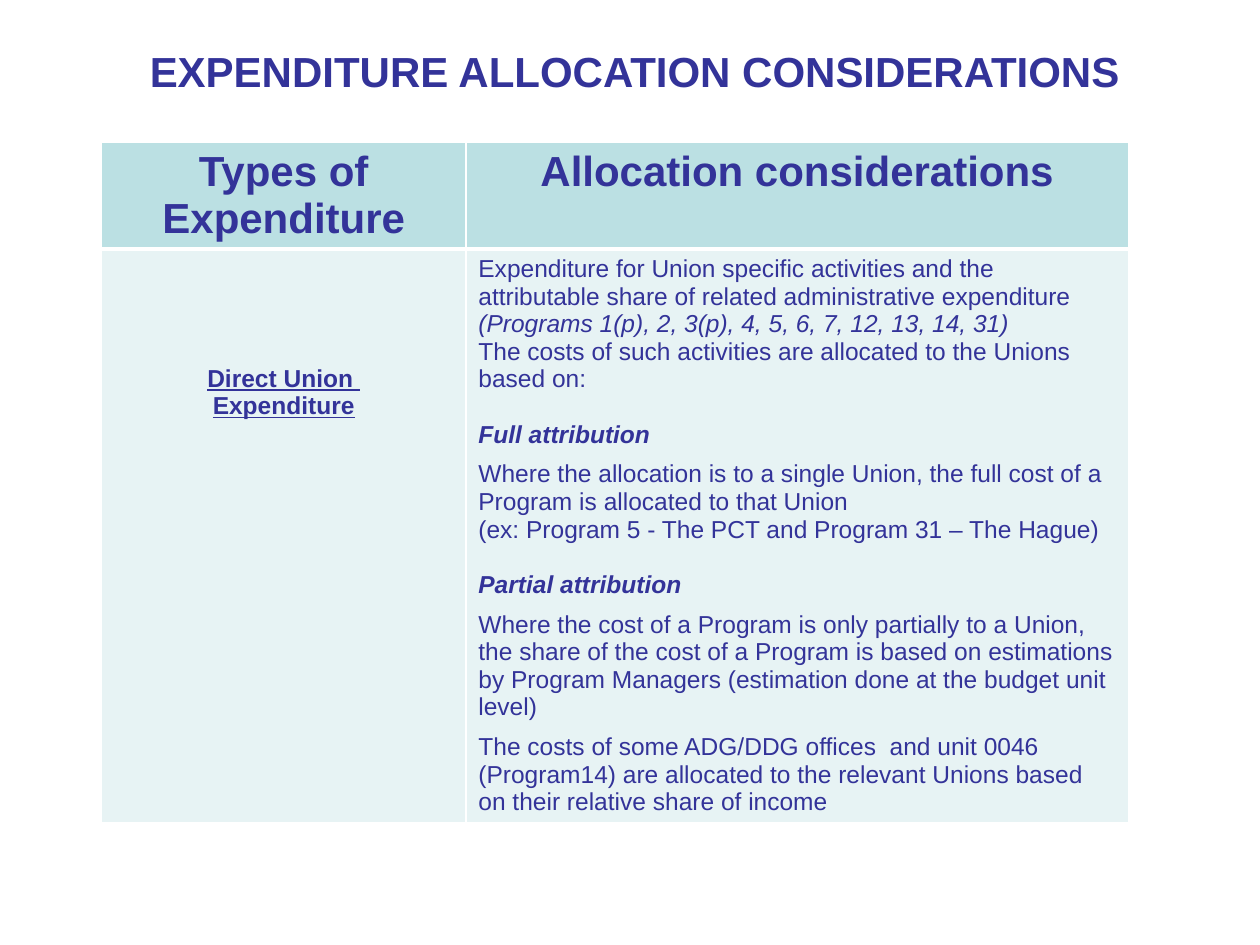
from dataclasses import dataclass

from lxml import etree
from pptx import Presentation
from pptx.dml.color import RGBColor
from pptx.enum import text
from pptx.oxml import ns
from pptx.util import Cm, Pt


@dataclass(frozen=True)
class Theme:
    font: str = "Arial"
    ink: str = "333399"
    header_fill: str = "BBE0E3"
    body_fill: str = "E7F3F4"
    rule: str = "FFFFFF"
    heading: int = 24
    body: int = 14
    wide_gap: int = 16
    small_gap: int = 7


@dataclass(frozen=True)
class Run:
    wording: str
    bold: bool = False
    italic: bool = False
    underline: bool = False


@dataclass(frozen=True)
class Para:
    runs: tuple[Run, ...]
    gap: int = 0


@dataclass(frozen=True)
class Entry:
    paras: tuple[Para, ...]
    fill: str
    size: int
    centred: bool = False
    top: float = 0.13
    bottom_rule: int = 1


THEME = Theme()


def plain(wording: str, gap: int = 0, **style: bool) -> Para:
    return Para((Run(wording, **style),), gap)


def write(frame, paras: tuple[Para, ...], *, size: int, centred: bool = False) -> None:
    frame.word_wrap = True
    for index, para in enumerate(paras):
        line = frame.paragraphs[0] if index == 0 else frame.add_paragraph()
        line.alignment = text.PP_ALIGN.CENTER if centred else text.PP_ALIGN.LEFT
        line.space_before = Pt(para.gap)
        for part in para.runs:
            run = line.add_run()
            run.text = part.wording
            run.font.name = THEME.font
            run.font.size = Pt(size)
            run.font.color.rgb = RGBColor.from_string(THEME.ink)
            run.font.bold = part.bold
            run.font.italic = part.italic
            run.font.underline = part.underline


def rule_cell(cell, bottom: int) -> None:
    properties = cell._tc.get_or_add_tcPr()
    widths = {"a:lnL": 1, "a:lnR": 1, "a:lnT": 1, "a:lnB": bottom}
    for position, (side, width) in enumerate(widths.items()):
        border = etree.Element(ns.qn(side), w=str(Pt(width)))
        fill = etree.SubElement(border, ns.qn("a:solidFill"))
        etree.SubElement(fill, ns.qn("a:srgbClr"), val=THEME.rule)
        properties.insert(position, border)


def fill_cell(cell, entry: Entry) -> None:
    cell.fill.solid()
    cell.fill.fore_color.rgb = RGBColor.from_string(entry.fill)
    cell.margin_top = Cm(entry.top)
    write(cell.text_frame, entry.paras, size=entry.size, centred=entry.centred)
    rule_cell(cell, entry.bottom_rule)


def header(wording: str) -> Entry:
    return Entry((plain(wording, bold=True),), THEME.header_fill, THEME.heading,
                 centred=True, bottom_rule=3)


EXPENDITURE_TYPE = (
    plain("Direct Union ", bold=True, underline=True),
    plain("Expenditure", bold=True, underline=True),
)

CONSIDERATIONS = (
    Para((
        Run("Expenditure for Union specific activities and the attributable share "
            "of related administrative expenditure "),
        Run("(Programs 1(p), 2, 3(p), 4, 5, 6, 7, 12, 13, 14, 31)", italic=True),
    )),
    plain("The costs of such activities are allocated to the Unions based on:"),
    plain("Full attribution", THEME.wide_gap, bold=True, italic=True),
    plain("Where the allocation is to a single Union, the full cost of a Program "
          "is allocated to that Union", THEME.small_gap),
    plain("(ex: Program 5 - The PCT and Program 31 – The Hague)"),
    plain("Partial attribution", THEME.wide_gap, bold=True, italic=True),
    plain("Where the cost of a Program is only partially to a Union, the share of "
          "the cost of a Program is based on estimations by Program Managers "
          "(estimation done at the budget unit level)", THEME.small_gap),
    plain("The costs of some ADG/DDG offices  and unit 0046 (Program14) are "
          "allocated to the relevant Unions based on their relative share of income",
          THEME.small_gap),
)

ROWS = (
    (header("Types of Expenditure"), header("Allocation considerations")),
    (Entry(EXPENDITURE_TYPE, THEME.body_fill, THEME.body, centred=True, top=2.34),
     Entry(CONSIDERATIONS, THEME.body_fill, THEME.body)),
)
COLUMN_WIDTHS = (7.34, 13.36)
ROW_HEIGHTS = (2.11, 11.5)


def main() -> None:
    deck = Presentation()
    deck.slide_width, deck.slide_height = Cm(25.4), Cm(19.05)
    slide = deck.slides.add_slide(deck.slide_layouts.get_by_name("Title Only"))

    title = slide.shapes.title
    title.left, title.top, title.width, title.height = Cm(1.96), Cm(0.79), Cm(21.67), Cm(1.27)
    title.text_frame.auto_size = text.MSO_AUTO_SIZE.NONE
    title.text_frame.vertical_anchor = text.MSO_ANCHOR.MIDDLE
    write(title.text_frame, (plain("EXPENDITURE ALLOCATION CONSIDERATIONS", bold=True),),
          size=THEME.heading, centred=True)

    allocation = slide.shapes.add_table(
        len(ROWS), len(COLUMN_WIDTHS), Cm(2.05), Cm(2.87),
        Cm(sum(COLUMN_WIDTHS)), Cm(sum(ROW_HEIGHTS))).table
    for column, width in zip(allocation.columns, COLUMN_WIDTHS):
        column.width = Cm(width)
    for row, height, entries in zip(allocation.rows, ROW_HEIGHTS, ROWS):
        row.height = Cm(height)
        for cell, entry in zip(row.cells, entries):
            fill_cell(cell, entry)

    deck.save("out.pptx")


if __name__ == "__main__":
    main()
